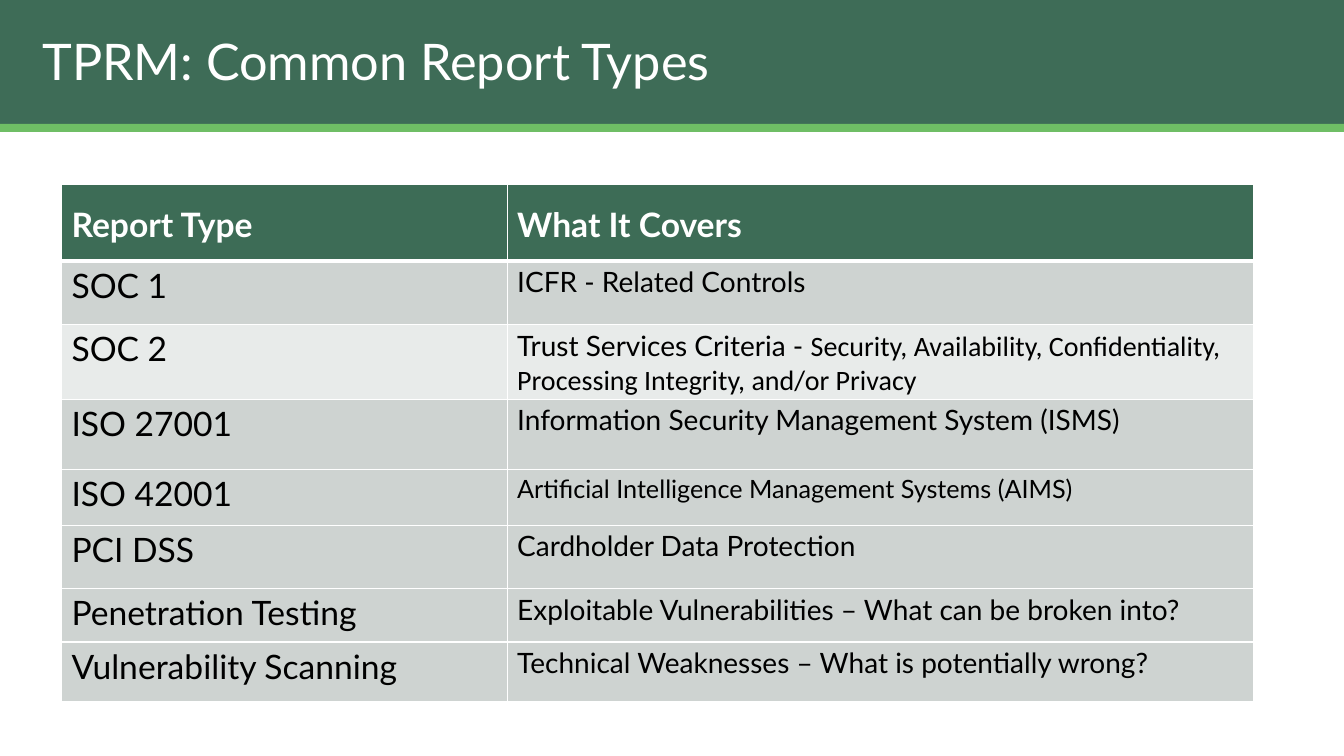
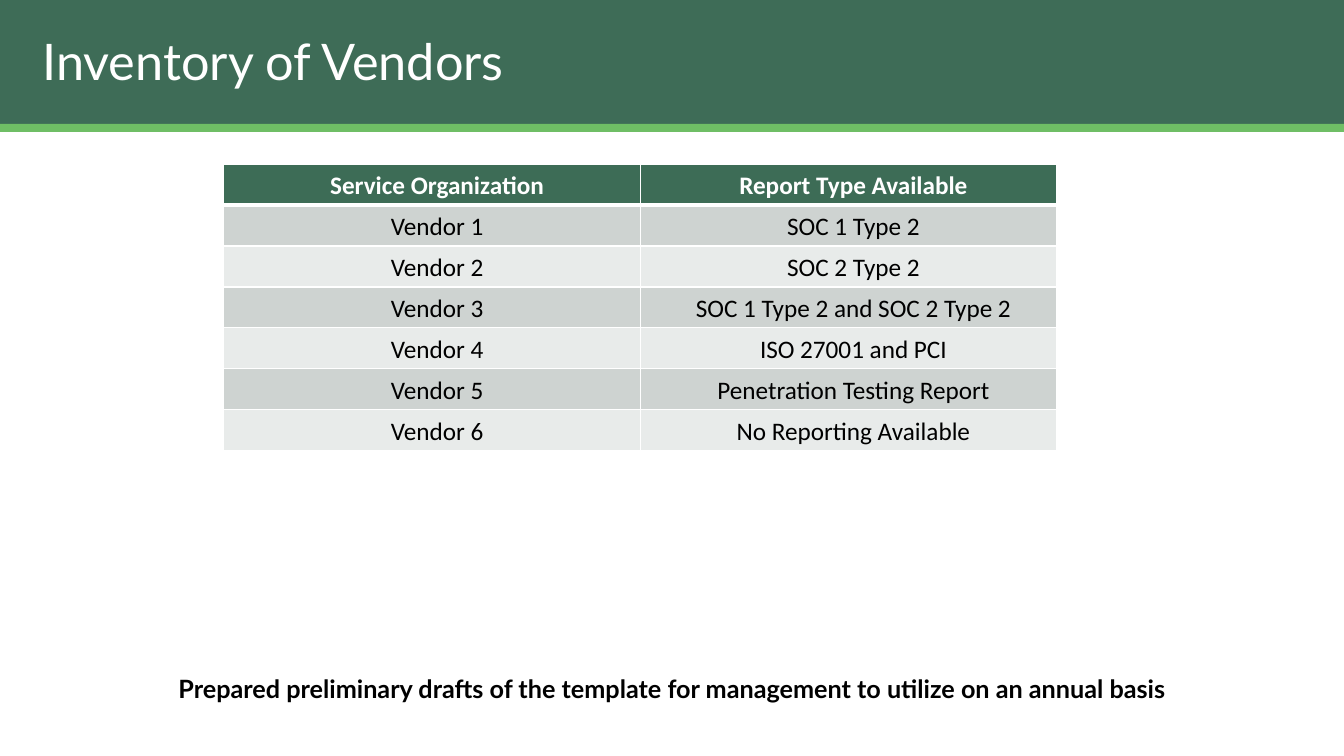
from lxml.etree import SubElement
from pptx import Presentation
from pptx.dml.color import RGBColor
from pptx.enum.shapes import MSO_SHAPE
from pptx.enum.text import MSO_ANCHOR, MSO_AUTO_SIZE, PP_ALIGN
from pptx.oxml.ns import qn
from pptx.util import Inches, Pt

# Shared look
WHITE, BLACK = "FFFFFF", "000000"
HEAD, DARK, LIGHT = "3D6C56", "CED3D1", "E8EBEA"
BANDS = [((0, 0, 13.33, 1.25), "3E6C57"), ((0, 1.23, 13.33, 0.08), "6FBE65")]
TITLE_BOX = (0.32, 0.18, 9.71, 0.91)
TITLE = {"name": "Lato", "size": Pt(36), "bold": False, "color": WHITE}
NOTE = {"name": "Lato", "size": Pt(18), "bold": True, "color": BLACK}

# Content: a cell is a text, or a list of (text, format changes)
REPORTS = {
    "rows": [
        ("Report Type", [("What It Covers", {"size": Pt(24)})]),
        ("SOC 1", "ICFR - Related Controls"),
        ("SOC 2", [
            ("Trust Services Criteria - ", {}),
            ("Security, Availability, Confidentiality, "
             "Processing Integrity, and/or Privacy", {"name": "Calibri"}),
        ]),
        ("ISO 27001", "Information Security Management System (ISMS)"),
        ("ISO 42001", [("Artificial Intelligence Management Systems (AIMS)",
                        {"size": Pt(18)})]),
        ("PCI DSS", "Cardholder Data Protection"),
        ("Penetration Testing",
         "Exploitable Vulnerabilities – What can be broken into?"),
        ("Vulnerability Scanning",
         "Technical Weaknesses – What is potentially wrong?"),
    ],
    "at": (0.61, 1.83),
    "cols": [4.42, 7.4],
    "highs": [0.76, 0.63, 0.74, 0.7, 0.55, 0.63, 0.53, 0.59],
    "light": {2},
    "font": "Lato",
    "sizes": (24, 20),
    "align": PP_ALIGN.LEFT,
    "anchor": MSO_ANCHOR.TOP,
    "top": 0.04,
}
VENDORS = {
    "rows": [
        ("Service Organization", "Report Type Available"),
        ("Vendor 1", "SOC 1 Type 2"),
        ("Vendor 2", "SOC 2 Type 2"),
        ("Vendor 3", "SOC 1 Type 2 and SOC 2 Type 2"),
        ("Vendor 4", "ISO 27001 and PCI"),
        ("Vendor 5", "Penetration Testing Report"),
        ("Vendor 6", "No Reporting Available"),
    ],
    "at": (2.22, 1.63),
    "cols": [4.13] * 2,
    "highs": [2.84 / 7] * 7,
    "light": {2, 4, 6},
    "font": "Calibri",
    "sizes": (18, 18),
    "align": PP_ALIGN.CENTER,
    "anchor": MSO_ANCHOR.MIDDLE,
    "top": 0.03,
}
FOOT = ("Prepared preliminary drafts of the template for management "
        "to utilize on an annual basis")


def rgb(code):
    return RGBColor.from_string(code)


def box(at):
    return [Inches(v) for v in at]


def paint(fill, code):
    fill.solid()
    fill.fore_color.rgb = rgb(code)


def write(para, text, style):
    run = para.add_run()
    run.text = text
    for key, val in style.items():
        if key == "color":
            run.font.color.rgb = rgb(val)
        else:
            setattr(run.font, key, val)


def edge(cell, widths):
    """Draw white cell borders; they must come before the fill."""
    props = cell._tc.get_or_add_tcPr()
    for spot, (side, width) in enumerate(widths.items()):
        line = SubElement(props, qn("a:ln" + side), w=str(Pt(width)))
        fill = SubElement(line, qn("a:solidFill"))
        SubElement(fill, qn("a:srgbClr"), val=WHITE)
        props.insert(spot, line)


def add_grid(slide, spec):
    rows, cols, highs = spec["rows"], spec["cols"], spec["highs"]
    area = box((*spec["at"], sum(cols), sum(highs)))
    grid = slide.shapes.add_table(len(rows), len(cols), *area).table
    grid.horz_banding = False
    for col, wide in zip(grid.columns, cols):
        col.width = Inches(wide)
    for r, (row, high) in enumerate(zip(rows, highs)):
        grid.rows[r].height = Inches(high)
        head = r == 0
        shade = HEAD if head else LIGHT if r in spec["light"] else DARK
        for c, parts in enumerate(row):
            cell = grid.cell(r, c)
            form = {
                "margin_left": Inches(0.1),
                "margin_right": 0,
                "margin_top": Inches(0.03 if head else spec["top"]),
                "margin_bottom": 0,
                "vertical_anchor": MSO_ANCHOR.MIDDLE if head else spec["anchor"],
            }
            for key, val in form.items():
                setattr(cell, key, val)
            paint(cell.fill, shade)
            edge(cell, {"L": 1, "R": 1, "T": 3 if r == 1 else 1,
                        "B": 3 if head else 1})
            style = {"name": spec["font"], "size": Pt(spec["sizes"][c]),
                     "bold": head, "color": WHITE if head else BLACK}
            para = cell.text_frame.paragraphs[0]
            para.alignment = spec["align"]
            if isinstance(parts, str):
                parts = [(parts, {})]
            for text, diff in parts:
                write(para, text, style | diff)


def add_bands(slide, layout):
    """Put the header bands behind everything on the layout."""
    for n, (at, code) in enumerate(BANDS):
        band = slide.shapes.add_shape(MSO_SHAPE.RECTANGLE, *box(at))
        band.shadow.inherit = False
        paint(band.fill, code)
        band.line.fill.background()
        band.element.nvSpPr.cNvPr.set("id", str(90 + n))
        layout.shapes.element.insert(2 + n, band.element)


def add_page(deck, layout, text):
    slide = deck.slides.add_slide(layout)
    title = slide.shapes.title
    title.left, title.top, title.width, title.height = box(TITLE_BOX)
    frame = title.text_frame
    frame.auto_size = MSO_AUTO_SIZE.NONE
    frame.vertical_anchor = MSO_ANCHOR.MIDDLE
    para = frame.paragraphs[0]
    para.alignment = PP_ALIGN.LEFT
    para.line_spacing = 0.9
    write(para, text, TITLE)
    return slide


def main():
    deck = Presentation()
    deck.slide_width, deck.slide_height = Inches(13.33), Inches(7.5)
    layout = deck.slide_layouts.get_by_name("Title Only")

    # Report types
    slide = add_page(deck, layout, "TPRM: Common Report Types")
    add_bands(slide, layout)
    add_grid(slide, REPORTS)

    # Vendors
    slide = add_page(deck, layout, "Inventory of Vendors")
    add_grid(slide, VENDORS)
    note = slide.shapes.add_textbox(*box((1.03, 6.63, 11.27, 0.4)))
    note.text_frame.word_wrap = True
    para = note.text_frame.paragraphs[0]
    para.alignment = PP_ALIGN.CENTER
    write(para, FOOT, NOTE)

    deck.save("out.pptx")


if __name__ == "__main__":
    main()
